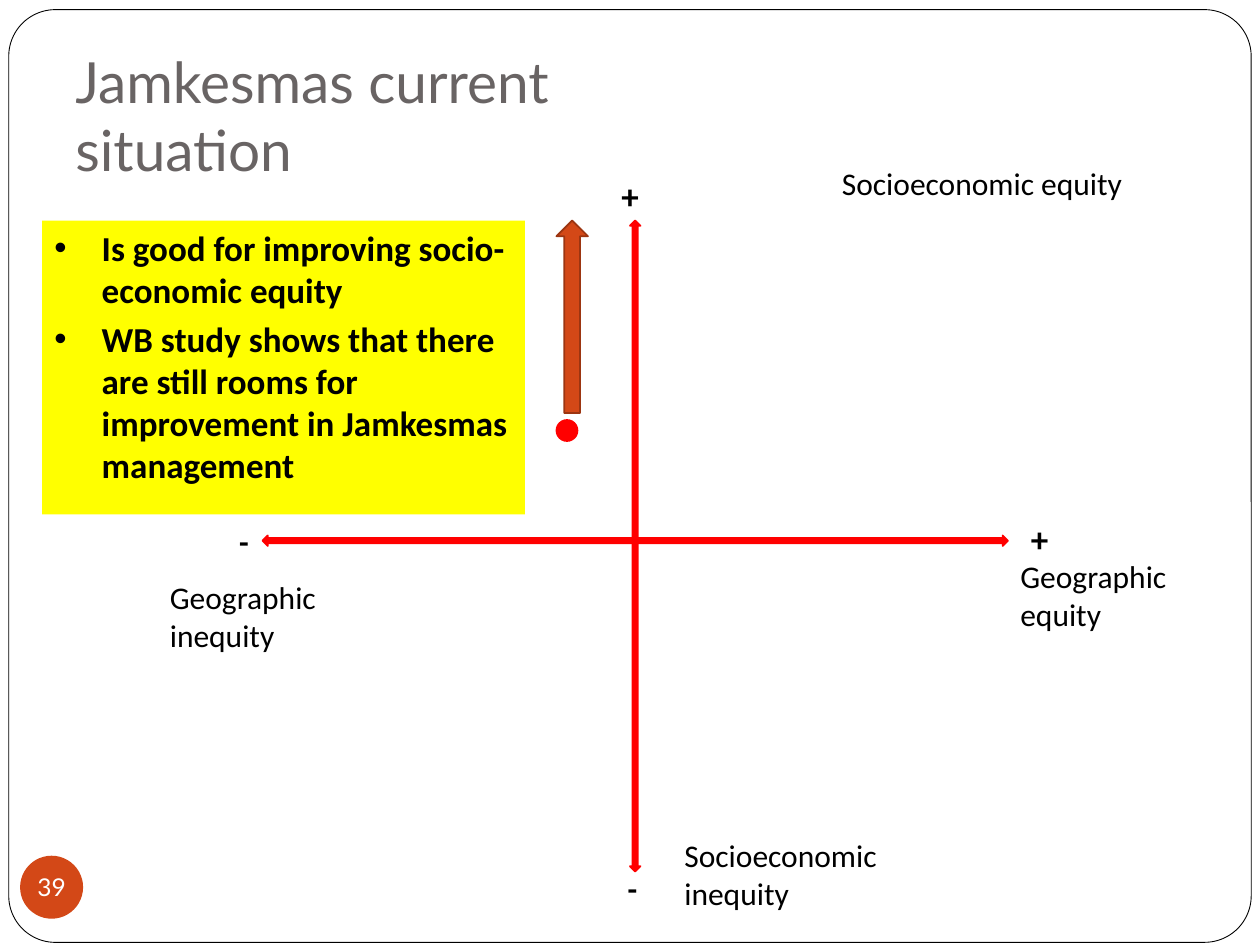
from pptx import Presentation
from pptx.dml.color import RGBColor
from pptx.enum.shapes import MSO_SHAPE as Shape
from pptx.enum.text import MSO_ANCHOR as Anchor, PP_ALIGN as Align
from pptx.oxml.ns import qn
from pptx.util import Pt
from lxml.etree import SubElement

RED, ORANGE, RUST = "FF0000", "D34817", "9C3511"
BLACK, WHITE, GREY, YELLOW = "000000", "FFFFFF", "696464", "FFFF00"


def color(hex_code):
    return RGBColor.from_string(hex_code)


def add_block(slide, kind, box, fill, line=None, weight=1):
    block = slide.shapes.add_shape(kind, *map(Pt, box))
    block.shadow.inherit = False
    block.fill.solid()
    block.fill.fore_color.rgb = color(fill)
    if line:
        block.line.color.rgb = color(line)
        block.line.width = Pt(weight)
    else:
        block.line.fill.background()
    return block


def write(holder, lines, size, ink=BLACK, font="Calibri", bold=False,
          align=Align.LEFT, **frame_format):
    frame = holder.text_frame
    settings = {"word_wrap": True, "vertical_anchor": Anchor.TOP, **frame_format}
    for name, value in settings.items():
        setattr(frame, name, value)
    frame.text = "\n".join(lines)
    letters = {"size": Pt(size), "name": font, "bold": bold}
    for paragraph in frame.paragraphs:
        paragraph.alignment = align
        for run in paragraph.runs:
            run.font.color.rgb = color(ink)
            for name, value in letters.items():
                setattr(run.font, name, value)
    return frame


def add_label(slide, box, lines, size, **text_format):
    write(slide.shapes.add_textbox(*map(Pt, box)), lines, size, **text_format)


def draw_frame(slide, box):
    border = add_block(slide, Shape.ROUNDED_RECTANGLE, box, WHITE, BLACK, 0.5)
    border.adjustments[0] = 0.05


def draw_title(slide, box):
    add_label(slide, box, ["Jamkesmas current situation"], 32.4, ink=GREY,
              font="Lato", vertical_anchor=Anchor.BOTTOM, margin_bottom=Pt(7.2))


def draw_page_number(slide, box):
    badge = add_block(slide, Shape.OVAL, box, ORANGE)
    margins = {f"margin_{side}": 0 for side in ("left", "top", "right", "bottom")}
    write(badge, ["39"], 14, ink=WHITE, font="Lato", align=Align.CENTER,
          vertical_anchor=Anchor.MIDDLE, **{**margins, "word_wrap": False})


def draw_equity_axes(slide, box):
    left, top, width, height = box
    thickness = 6
    across, down = left + 210, top + 180

    # Axes
    add_block(slide, Shape.LEFT_RIGHT_ARROW, (left, down, width, thickness), RED, RED)
    add_block(slide, Shape.UP_DOWN_ARROW, (across, top, thickness, height), RED, RED)

    # Names of the axis ends
    ends = [
        (across + 114, top - 36, ["Socioeconomic equity"]),
        (across + 24, top + 348, ["Socioeconomic inequity"]),
        (left + width, down + 9, ["Geographic", "equity"]),
        (left - 60, down + 21, ["Geographic", "inequity"]),
    ]
    for x, y, lines in ends:
        add_label(slide, (x, y, 180, 51), lines, 18)

    # Signs of the axis ends
    signs = [
        (across - 12, top - 30, "+", 20),
        (left + width + 6, down - 14, "+", 20),
        (left - 20.5, down - 11, "-", 18),
        (across - 8.5, top + 367, "-", 18),
    ]
    for x, y, sign, size in signs:
        add_label(slide, (x, y, 24, 30), [sign], size, bold=True)

    # Current position and its direction of improvement
    add_block(slide, Shape.OVAL, (across - 42, top + 114, 12, 12), RED, RED)
    add_block(slide, Shape.UP_ARROW, (across - 42, top, 18, 110), ORANGE, RUST)


def draw_findings(slide, box):
    findings = [
        "Is good for improving socio-economic equity",
        "WB study shows that there are still rooms for improvement in "
        "Jamkesmas management",
    ]
    frame = write(add_block(slide, Shape.RECTANGLE, box, YELLOW), findings, 20, bold=True)
    for paragraph in frame.paragraphs:
        paragraph.space_before = Pt(4)
        properties = paragraph._p.get_or_add_pPr()
        properties.set("marL", str(Pt(27)))
        properties.set("indent", str(-Pt(27)))
        SubElement(properties, qn("a:buFont"), typeface="Arial")
        SubElement(properties, qn("a:buChar"), char="•")


def main():
    deck = Presentation()
    deck.slide_width, deck.slide_height = Pt(720), Pt(540)
    slide = deck.slides.add_slide(deck.slide_layouts[6])
    draw_frame(slide, (5, 5.5, 710, 533))
    draw_title(slide, (36, 21.6, 288, 90))
    draw_page_number(slide, (11.5, 489, 36, 36))
    draw_equity_axes(slide, (150, 126, 426, 372))
    draw_findings(slide, (24, 126, 276, 168))
    deck.save("out.pptx")


if __name__ == "__main__":
    main()
